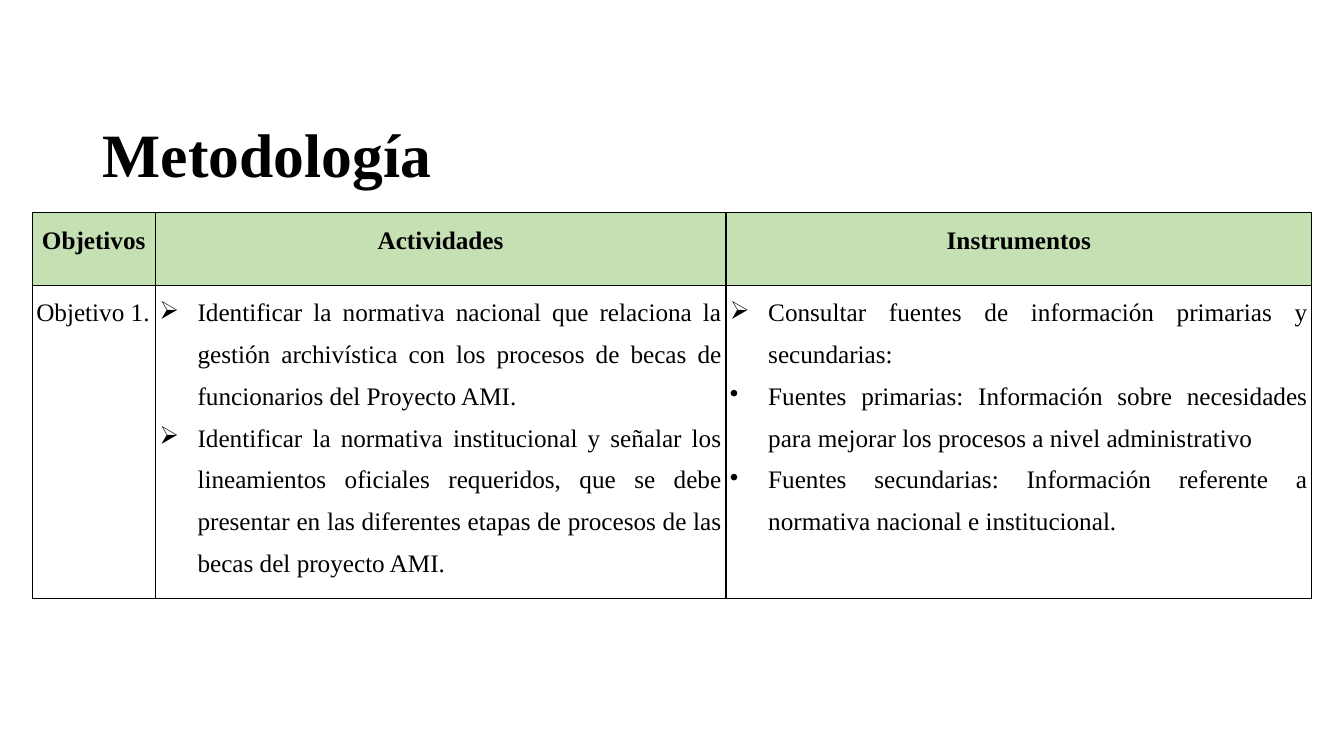
from dataclasses import dataclass

from lxml import etree
from pptx import Presentation
from pptx.dml.color import RGBColor
from pptx.enum.text import MSO_ANCHOR, MSO_AUTO_SIZE, PP_ALIGN
from pptx.oxml.ns import qn
from pptx.util import Emu, Inches, Pt

LEFT, CENTER, JUSTIFY = PP_ALIGN.LEFT, PP_ALIGN.CENTER, PP_ALIGN.JUSTIFY
MIDDLE, TOP = MSO_ANCHOR.MIDDLE, MSO_ANCHOR.TOP
NO_FIT = MSO_AUTO_SIZE.NONE
TITLE_ONLY = 5


@dataclass(frozen=True)
class Theme:
    """Colours, type sizes and text spacing of the deck."""
    font: str = "Times New Roman"
    ink: str = "000000"
    header_fill: str = "C5E0B3"
    title_size: int = 44
    table_size: int = 18
    title_spacing: float = 0.9
    table_spacing: float = 1.5
    border: int = 1
    cell_margin: float = 0.04
    hanging: float = 0.38


THEME = Theme()
ARROW, DOT = "➢", "•"
COLUMNS = (1.22, 5.66, 5.81)
ROWS = (0.72, 3.11)
HEADERS = ("Objetivos", "Actividades", "Instrumentos")
CONTENT = (
    [("", "Objetivo 1.")],
    [
        (ARROW, "Identificar la normativa nacional que relaciona la gestión archivística "
                "con los procesos de becas de funcionarios del Proyecto AMI."),
        (ARROW, "Identificar la normativa institucional y señalar los lineamientos oficiales "
                "requeridos, que se debe presentar en las diferentes etapas de procesos de las "
                "becas del proyecto AMI."),
    ],
    [
        (ARROW, "Consultar fuentes de información primarias y secundarias:"),
        (DOT, "Fuentes primarias: Información sobre necesidades para mejorar los procesos "
              "a nivel administrativo"),
        (DOT, "Fuentes secundarias: Información referente a normativa nacional e institucional."),
    ],
)


def format_paragraph(para, size, align, spacing, bold=False):
    """Set the alignment, line spacing and run format of a paragraph."""
    para.alignment = align
    para.line_spacing = spacing
    for span in para.runs:
        span.font.name = THEME.font
        span.font.size = Pt(size)
        span.font.bold = bold
        span.font.color.rgb = RGBColor.from_string(THEME.ink)


def add_bullet(para, mark):
    """Give a paragraph a hanging bullet."""
    properties = para._p.get_or_add_pPr()
    properties.set("marL", str(Inches(THEME.hanging)))
    properties.set("indent", str(-Inches(THEME.hanging)))
    etree.SubElement(properties, qn("a:buChar"), char=mark)


def add_borders(cell):
    """Draw a solid line on the four sides of a cell."""
    properties = cell._tc.get_or_add_tcPr()
    for position, side in enumerate(("lnL", "lnR", "lnT", "lnB")):
        line = etree.Element(qn(f"a:{side}"), w=str(Pt(THEME.border)))
        fill = etree.SubElement(line, qn("a:solidFill"))
        etree.SubElement(fill, qn("a:srgbClr"), val=THEME.ink)
        properties.insert(position, line)


def fill_cell(cell, items, align, bold=False, color=None):
    """Write marked paragraphs into a cell and format it."""
    cell.margin_left = cell.margin_right = Inches(THEME.cell_margin)
    cell.margin_top = cell.margin_bottom = 0
    cell.vertical_anchor = TOP
    cell.text_frame.text = "\n".join(text for _, text in items)
    for para, (mark, _) in zip(cell.text_frame.paragraphs, items):
        format_paragraph(para, THEME.table_size, align, THEME.table_spacing, bold)
        if mark:
            add_bullet(para, mark)
    if color:
        cell.fill.solid()
        cell.fill.fore_color.rgb = RGBColor.from_string(color)
    else:
        cell.fill.background()
    add_borders(cell)


def add_title(page, text, left, top, width, height):
    """Place and format the title placeholder."""
    title = page.shapes.title
    title.left, title.top, title.width, title.height = left, top, width, height
    frame = title.text_frame
    frame.text = text
    frame.auto_size = NO_FIT
    frame.vertical_anchor = MIDDLE
    format_paragraph(frame.paragraphs[0], THEME.title_size, LEFT, THEME.title_spacing, True)


def add_method_table(page, left, top):
    """Add the table of objectives, activities and instruments."""
    frame = page.shapes.add_table(len(ROWS), len(COLUMNS), left, top,
                                  Inches(sum(COLUMNS)), Inches(sum(ROWS)))
    table = frame.table
    table.first_row = table.horz_banding = False
    for column, width in zip(table.columns, COLUMNS):
        column.width = Inches(width)
    for row, height in zip(table.rows, ROWS):
        row.height = Inches(height)
    for index, (header, items) in enumerate(zip(HEADERS, CONTENT)):
        fill_cell(table.cell(0, index), [("", header)], CENTER, True, THEME.header_fill)
        fill_cell(table.cell(1, index), items, JUSTIFY)


def main():
    """Build the methodology slide."""
    deck = Presentation()
    deck.slide_width, deck.slide_height = Inches(13.33), Inches(7.5)
    page = deck.slides.add_slide(deck.slide_layouts[TITLE_ONLY])
    margin = Inches(0.92)
    add_title(page, "Metodología", margin, Inches(0.84),
              Emu(deck.slide_width - 2 * margin), Inches(1.45))
    table_left = Emu((deck.slide_width - Inches(sum(COLUMNS))) // 2)
    add_method_table(page, table_left, Inches(2.11))
    deck.save("out.pptx")


if __name__ == "__main__":
    main()
